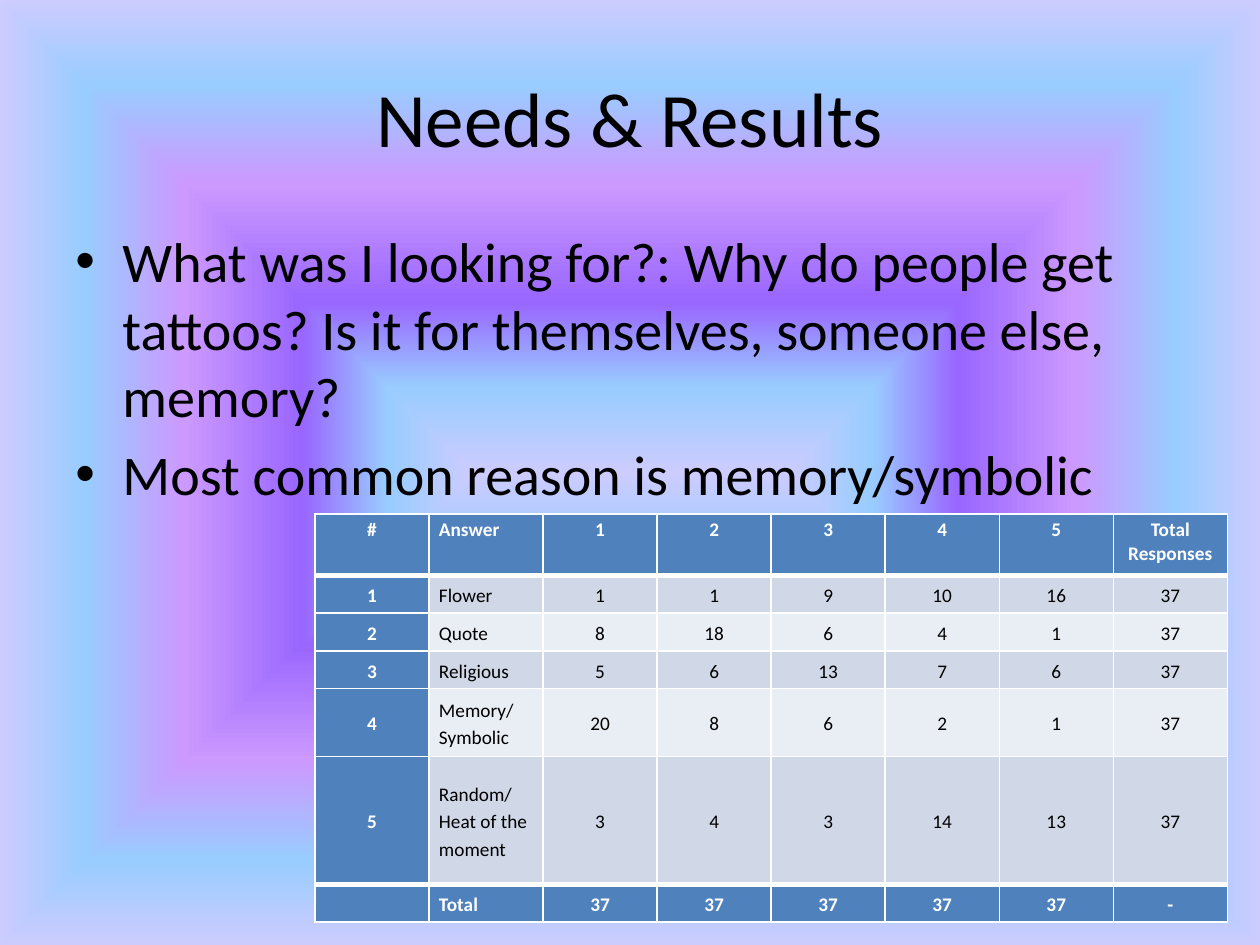
from pptx import Presentation
from pptx.dml.color import RGBColor
from pptx.enum.text import MSO_ANCHOR as Anchor, PP_ALIGN as Align
from pptx.oxml import parse_xml
from pptx.oxml.ns import nsdecls, qn
from pptx.util import Cm, Pt

BLUE, WHITE, BLACK = "4F81BD", "FFFFFF", "000000"
BANDS = ["E9EDF4", "D0D8E8"]


def style(par, size, tint, bold=False):
    """Set the font of a whole paragraph."""
    font = par.font
    font.name, font.size, font.bold = "Calibri", Pt(size), bold
    font.color.rgb = RGBColor.from_string(tint)


def edge(cell, sides):
    """Draw white cell borders; sides maps L, R, T, B to widths in points."""
    for spot, (side, width) in enumerate(sides.items()):
        line = parse_xml(
            f'<a:ln{side} {nsdecls("a")} w="{Pt(width)}"><a:solidFill>'
            f'<a:srgbClr val="{WHITE}"/></a:solidFill></a:ln{side}>')
        cell._tc.get_or_add_tcPr().insert(spot, line)


deck = Presentation()
deck.slide_width, deck.slide_height = Cm(25.4), Cm(19.05)
slide = deck.slides.add_slide(deck.slide_layouts[5])

# Background: rings of colour from the centre outwards
stops = [(0, "CCCCFF"), (18, "99CCFF"), (36, "9966FF"),
         (61, "CC99FF"), (82, "99CCFF"), (100, "CCCCFF")]
rings = "".join(f'<a:gs pos="{pos * 1000}"><a:srgbClr val="{tint}"/></a:gs>'
                for pos, tint in stops)
slide.background.fill.solid()
back = slide._element.find(".//" + qn("p:bgPr"))
back.replace(back[0], parse_xml(
    f'<a:gradFill {nsdecls("a")} rotWithShape="1"><a:gsLst>{rings}</a:gsLst>'
    '<a:path path="shape"><a:fillToRect l="50000" t="50000" r="50000" b="50000"/>'
    '</a:path></a:gradFill>'))

# Title
title = slide.shapes.title
title.left, title.top, title.width, title.height = Cm(1.27), Cm(0.76), Cm(22.86), Cm(3.18)
title.text_frame.text = "Needs & Results"
title.text_frame.vertical_anchor = Anchor.MIDDLE
head = title.text_frame.paragraphs[0]
head.alignment = Align.CENTER
style(head, 44, BLACK)

# Bullets
points = [
    "What was I looking for?: Why do people get tattoos? "
    "Is it for themselves, someone else, memory?",
    "Most common reason is memory/symbolic",
]
body = slide.shapes.add_textbox(Cm(1.27), Cm(4.45), Cm(22.86), Cm(12.57)).text_frame
body.word_wrap = True
body.text = "\n".join(points)
for par in body.paragraphs:
    style(par, 32, BLACK)
    par.space_before = Pt(6.4)
    props = par._p.get_or_add_pPr()
    props.set("marL", str(Cm(0.95)))
    props.set("indent", str(-Cm(0.95)))
    font = props.find(qn("a:defRPr"))
    font.addprevious(parse_xml(f'<a:buFont {nsdecls("a")} typeface="Arial"/>'))
    font.addprevious(parse_xml(f'<a:buChar {nsdecls("a")} char="•"/>'))

# Table of answers
rows = [
    ["#", "Answer", 1, 2, 3, 4, 5, "Total Responses"],
    [1, "Flower", 1, 1, 9, 10, 16, 37],
    [2, "Quote", 8, 18, 6, 4, 1, 37],
    [3, "Religious", 5, 6, 13, 7, 6, 37],
    [4, "Memory/Symbolic", 20, 8, 6, 2, 1, 37],
    [5, "Random/Heat of the moment", 3, 4, 3, 14, 13, 37],
    ["", "Total", 37, 37, 37, 37, 37, "-"],
]
highs = [1.24, 0.76, 0.76, 0.76, 1.37, 2.58, 0.76]
last = len(rows) - 1
table = slide.shapes.add_table(len(rows), len(rows[0]), Cm(6.35), Cm(10.36),
                               Cm(18.4), Cm(sum(highs))).table
for col in table.columns:
    col.width = Cm(2.3)
for r, (row, high) in enumerate(zip(rows, highs)):
    table.rows[r].height = Cm(high)
    for c, value in enumerate(row):
        cell = table.cell(r, c)
        strong = r in (0, last) or c == 0
        cell.fill.solid()
        cell.fill.fore_color.rgb = RGBColor.from_string(BLUE if strong else BANDS[r % 2])
        edge(cell, {"L": 1, "R": 1,
                    "T": 3 if r in (1, last) else 1,
                    "B": 3 if r in (0, last - 1) else 1})
        cell.margin_left = cell.margin_right = Cm(0.2)
        cell.margin_top = cell.margin_bottom = Cm(0.08)
        cell.vertical_anchor = Anchor.MIDDLE if r else Anchor.TOP
        cell.text = str(value)
        par = cell.text_frame.paragraphs[0]
        par.alignment = Align.LEFT if c == 1 else Align.CENTER
        par.line_spacing = 1.15 if r else 1.0
        style(par, 11, WHITE if strong else BLACK, strong)
        if value == "":
            par._p.get_or_add_endParaRPr().set("sz", "1100")

deck.save("out.pptx")
